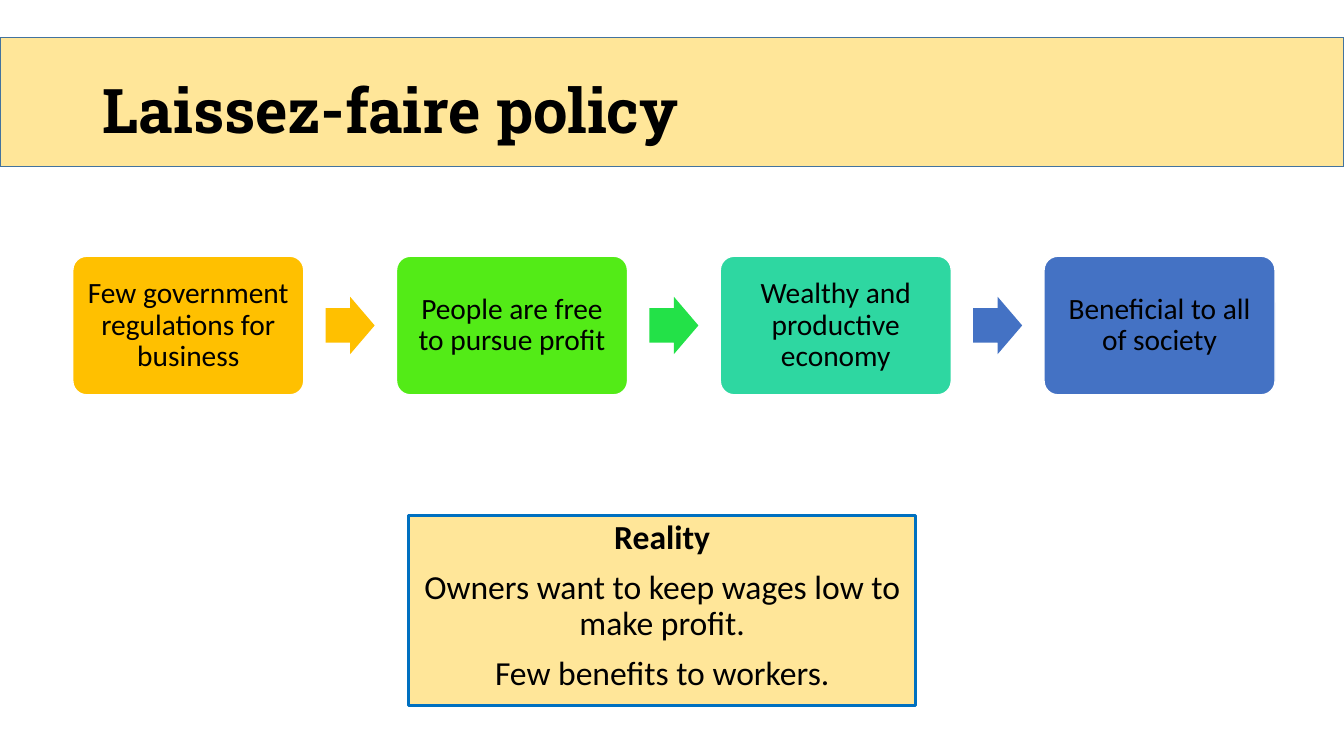
from typing import NamedTuple, Optional

from pptx import Presentation
from pptx.dml.color import RGBColor
from pptx.enum.shapes import MSO_SHAPE
from pptx.enum.text import MSO_ANCHOR, MSO_AUTO_SIZE, PP_ALIGN
from pptx.shapes.autoshape import Shape
from pptx.slide import Slide
from pptx.text.text import TextFrame
from pptx.util import Pt

BLACK = RGBColor(0x00, 0x00, 0x00)
WHITE = RGBColor(0xFF, 0xFF, 0xFF)
CREAM = RGBColor(0xFF, 0xE6, 0x99)
BAND_EDGE = RGBColor(0x43, 0x73, 0x9E)
REALITY_EDGE = RGBColor(0x00, 0x70, 0xC0)
GOLD = RGBColor(0xFF, 0xC0, 0x00)
LIME = RGBColor(0x53, 0xEB, 0x17)
GREEN = RGBColor(0x23, 0xE1, 0x48)
TEAL = RGBColor(0x2E, 0xD7, 0xA1)
BLUE = RGBColor(0x44, 0x72, 0xC4)

SLIDE_WIDTH, SLIDE_HEIGHT = 960, 540
STEP_LEFT, STEP_TOP, STEP_WIDTH, STEP_HEIGHT = 52, 183, 165, 99
STEP_PITCH = 231.25
ARROW_WIDTH, ARROW_HEIGHT = 35, 41
ARROW_GAP = (STEP_PITCH - STEP_WIDTH - ARROW_WIDTH) / 2


class Area(NamedTuple):
    left: float
    top: float
    width: float
    height: float


class Edge(NamedTuple):
    color: RGBColor
    width: float


class Step(NamedTuple):
    text: str
    fill: RGBColor
    arrow_fill: Optional[RGBColor] = None


class Line(NamedTuple):
    text: str
    bold: bool = False


STEPS = [
    Step("Few government regulations for business", GOLD, GOLD),
    Step("People are free to pursue profit", LIME, GREEN),
    Step("Wealthy and productive economy", TEAL, BLUE),
    Step("Beneficial to all of society", BLUE),
]
REALITY = [
    Line("Reality", bold=True),
    Line("Owners want to keep wages low to make profit."),
    Line("Few benefits to workers."),
]


def add_box(slide: Slide, kind: MSO_SHAPE, area: Area, fill: RGBColor,
            edge: Optional[Edge] = None) -> Shape:
    box = slide.shapes.add_shape(kind, *map(Pt, area))
    box.shadow.inherit = False
    box.fill.solid()
    box.fill.fore_color.rgb = fill
    if edge:
        box.line.color.rgb = edge.color
        box.line.width = Pt(edge.width)
    else:
        box.line.fill.background()
    return box


def write(frame: TextFrame, lines: list[Line], font: dict,
          alignment: PP_ALIGN, anchor: MSO_ANCHOR) -> None:
    frame.word_wrap = True
    frame.auto_size = MSO_AUTO_SIZE.NONE
    frame.vertical_anchor = anchor
    for index, line in enumerate(lines):
        para = frame.add_paragraph() if index else frame.paragraphs[0]
        para.alignment = alignment
        para.line_spacing = 0.9
        para.space_before = Pt(10 if index else 0)
        span = para.add_run()
        span.text = line.text
        span.font.bold = line.bold
        span.font.color.rgb = BLACK
        for name, value in font.items():
            setattr(span.font, name, value)


def add_heading(slide: Slide) -> None:
    title = slide.shapes.title
    area = {"left": 66, "top": 28.75, "width": 828, "height": 104.4}
    for name, value in area.items():
        setattr(title, name, Pt(value))
    write(title.text_frame, [Line("Laissez-faire policy", bold=True)],
          {"name": "Roboto Slab", "size": Pt(44)}, PP_ALIGN.LEFT, MSO_ANCHOR.MIDDLE)
    band = add_box(slide, MSO_SHAPE.RECTANGLE, Area(0, 27, SLIDE_WIDTH, 92),
                   CREAM, Edge(BAND_EDGE, 1))
    title.element.addprevious(band.element)


def add_step(slide: Slide, index: int, step: Step) -> None:
    """Draw one step of the chain and the arrow that follows it."""
    left = STEP_LEFT + index * STEP_PITCH
    box = add_box(slide, MSO_SHAPE.ROUNDED_RECTANGLE,
                  Area(left, STEP_TOP, STEP_WIDTH, STEP_HEIGHT),
                  step.fill, Edge(WHITE, 1))
    box.adjustments[0] = 0.1
    frame = box.text_frame
    for side in ("left", "top", "right", "bottom"):
        setattr(frame, f"margin_{side}", Pt(6.5))
    write(frame, [Line(step.text)], {"name": "Calibri", "size": Pt(21)},
          PP_ALIGN.CENTER, MSO_ANCHOR.MIDDLE)
    if step.arrow_fill:
        arrow_top = STEP_TOP + (STEP_HEIGHT - ARROW_HEIGHT) / 2
        arrow = add_box(slide, MSO_SHAPE.RIGHT_ARROW,
                        Area(left + STEP_WIDTH + ARROW_GAP, arrow_top,
                             ARROW_WIDTH, ARROW_HEIGHT), step.arrow_fill)
        arrow.adjustments[0] = 0.6
        arrow.adjustments[1] = 0.5


def add_reality(slide: Slide) -> None:
    box = add_box(slide, MSO_SHAPE.RECTANGLE, Area(292, 368, 362, 136),
                  CREAM, Edge(REALITY_EDGE, 2.25))
    write(box.text_frame, REALITY, {"name": "Calibri", "size": Pt(24)},
          PP_ALIGN.CENTER, MSO_ANCHOR.TOP)


def main() -> None:
    deck = Presentation()
    deck.slide_width, deck.slide_height = Pt(SLIDE_WIDTH), Pt(SLIDE_HEIGHT)
    page = deck.slides.add_slide(deck.slide_layouts.get_by_name("Title Only"))
    add_heading(page)
    add_reality(page)
    for index, step in enumerate(STEPS):
        add_step(page, index, step)
    deck.save("out.pptx")


if __name__ == "__main__":
    main()
